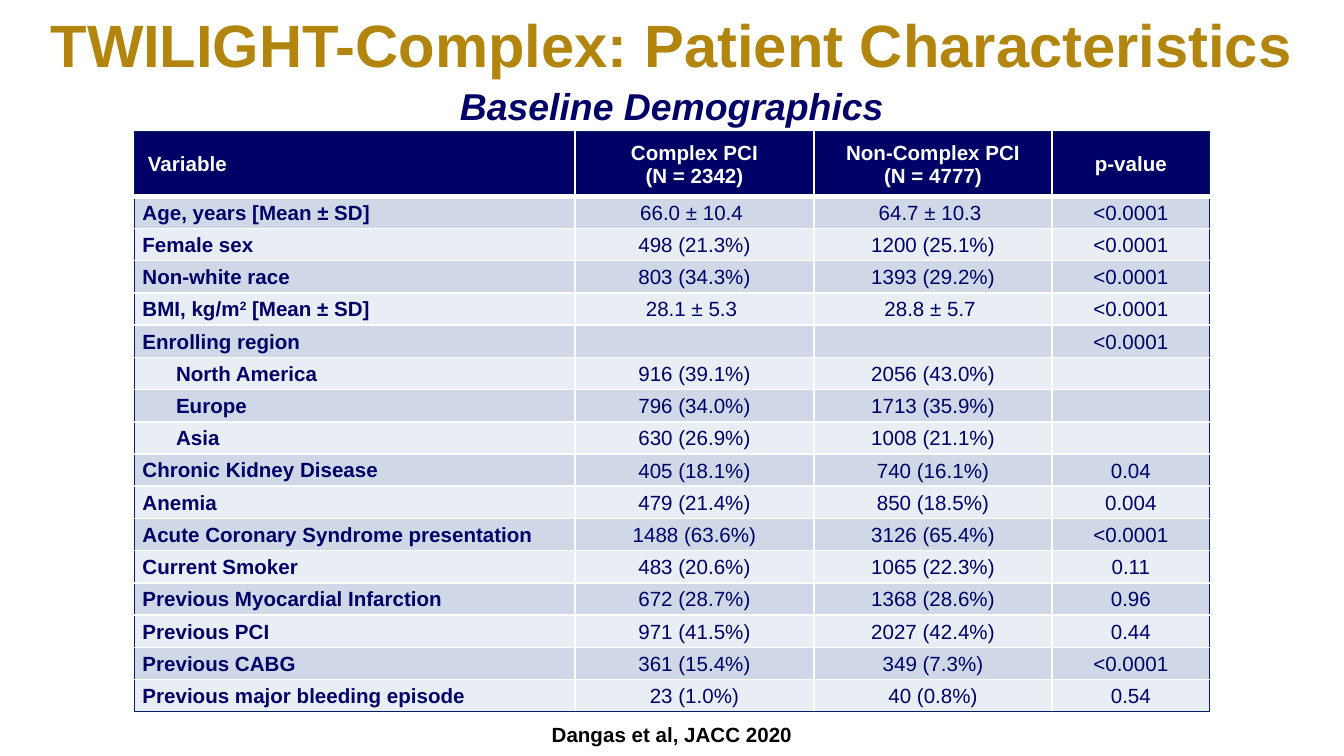
from lxml import etree
from pptx import Presentation, util as u
from pptx.dml.color import RGBColor
from pptx.enum import text
from pptx.oxml.ns import qn

NAVY, EDGE, WHITE = "000066", "002060", "FFFFFF"
BANDS = ["E9EDF4", "D0D8E8"]
LEFT, CENTER = text.PP_ALIGN.LEFT, text.PP_ALIGN.CENTER


def rgb(value):
    return RGBColor.from_string(value)


def write(tf, content, size=11, color=NAVY, bold=True, italic=False,
          align=CENTER, spacing=None, indent=0):
    """Fill a text frame: newlines split paragraphs, ^ marks toggle superscript."""
    tf.word_wrap = True
    for i, line in enumerate(content.split("\n")):
        p = tf.paragraphs[0] if i == 0 else tf.add_paragraph()
        p.alignment = align
        if spacing:
            p.line_spacing = spacing
        if indent:
            p._p.get_or_add_pPr().set("marL", str(u.Inches(indent)))
        if not line:
            etree.SubElement(p._p, qn("a:endParaRPr"), sz=str(size * 100))
            continue
        for j, part in enumerate(line.split("^")):
            r = p.add_run()
            r.text = part
            r.font.name, r.font.size = "Arial", u.Pt(size)
            r.font.bold, r.font.italic = bold, italic
            r.font.color.rgb = rgb(color)
            if j % 2:
                r._r.get_or_add_rPr().set("baseline", "30000")


prs = Presentation()
prs.slide_width = u.Inches(10)
prs.slide_height = prs.slide_width * 9 // 16
s = prs.slides.add_slide(prs.slide_layouts[6])

# Title and subtitle
for content, box, style in [
    ("TWILIGHT-Complex: Patient Characteristics", (-0.01, 0.01, 10.02, 0.64),
     dict(size=32, color="B2860E")),
    ("Baseline Demographics", (0.36, 0.57, 9.28, 0.44), dict(size=20, italic=True)),
]:
    tf = s.shapes.add_textbox(*map(u.Inches, box)).text_frame
    write(tf, content, **style)

# Table of characteristics
header = ["Variable", "Complex PCI\n(N = 2342)", "Non-Complex PCI\n(N = 4777)", "p-value"]
regions = ["North America", "Europe", "Asia"]
rows = [
    header,
    ["Age, years [Mean ± SD]", "66.0 ± 10.4 ", "64.7 ± 10.3 ", "<0.0001"],
    ["Female sex", "498 (21.3%)", "1200 (25.1%)", "<0.0001"],
    ["Non-white race", "803 (34.3%)", "1393 (29.2%)", "<0.0001"],
    ["BMI, kg/m^2^ [Mean ± SD]", "28.1 ± 5.3 ", "28.8 ± 5.7 ", "<0.0001"],
    ["Enrolling region", "", "", "<0.0001"],
    ["North America", "916 (39.1%)", "2056 (43.0%)", ""],
    ["Europe", "796 (34.0%)", "1713 (35.9%)", ""],
    ["Asia", "630 (26.9%)", "1008 (21.1%)", ""],
    ["Chronic Kidney Disease", "405 (18.1%)", "740 (16.1%)", "0.04"],
    ["Anemia", "479 (21.4%)", "850 (18.5%)", "0.004"],
    ["Acute Coronary Syndrome presentation", "1488 (63.6%)", "3126 (65.4%)", "<0.0001"],
    ["Current Smoker", "483 (20.6%)", "1065 (22.3%)", "0.11"],
    ["Previous Myocardial Infarction", "672 (28.7%)", "1368 (28.6%)", "0.96"],
    ["Previous PCI", "971 (41.5%)", "2027 (42.4%)", "0.44"],
    ["Previous CABG", "361 (15.4%)", "349 (7.3%)", "<0.0001"],
    ["Previous major bleeding episode", "23 (1.0%)", "40 (0.8%)", "0.54"],
]
TABLE_W, TABLE_H = 8, 4.32
name_w, p_w = 3.28, 1.17
group_w = (TABLE_W - name_w - p_w) / 2
widths = [name_w, group_w, group_w, p_w]
row_h = TABLE_H / (len(rows) + 1)  # the header is two rows high
last_row, last_col = len(rows) - 1, len(widths) - 1

table = s.shapes.add_table(len(rows), len(widths), u.Inches(1), u.Inches(0.98),
                           u.Inches(TABLE_W), u.Inches(TABLE_H)).table
for col, width in zip(table.columns, widths):
    col.width = u.Inches(width)
for i, row in enumerate(table.rows):
    row.height = u.Inches(row_h if i else 2 * row_h)

for i, row in enumerate(rows):
    for j, content in enumerate(row):
        cell = table.cell(i, j)
        cell.vertical_anchor = text.MSO_ANCHOR.MIDDLE
        if i == 0:
            margins = (0.1, 0.05, 0.1, 0.05) if j == 0 else (0.01, 0.01, 0.01, 0)
            style = dict(color=WHITE, align=CENTER if j else LEFT)
        elif j == 0:
            margins = (0.06, 0.01, 0.01, 0)
            style = dict(align=LEFT, indent=0.25 if content in regions else 0)
        else:
            margins = (0.07, 0, 0.07, 0)
            style = dict(bold=False, spacing=1.07)
        (cell.margin_left, cell.margin_top,
         cell.margin_right, cell.margin_bottom) = map(u.Inches, margins)
        write(cell.text_frame, content, **style)

        # Thin navy outside, white inside, heavy white under the header
        outer = {"L": j == 0, "R": j == last_col, "T": i == 0, "B": i == last_row}
        under_header = {"T": i == 1, "B": i == 0}
        for side, on_edge in outer.items():
            weight = 0.5 if on_edge else 3 if under_header.get(side) else 1
            ln = etree.SubElement(cell._tc.get_or_add_tcPr(), qn("a:ln" + side),
                                  w=str(u.Pt(weight)))
            fill = etree.SubElement(ln, qn("a:solidFill"))
            etree.SubElement(fill, qn("a:srgbClr"), val=EDGE if on_edge else WHITE)
        cell.fill.solid()
        cell.fill.fore_color.rgb = rgb(BANDS[i % 2] if i else NAVY)

# Citation
box = s.shapes.add_textbox(*map(u.Inches, (3.18, 5.32, 3.64, 0.29)))
box.text_frame.vertical_anchor = text.MSO_ANCHOR.MIDDLE
write(box.text_frame, "Dangas et al, JACC 2020", color="000000")

prs.save("out.pptx")
